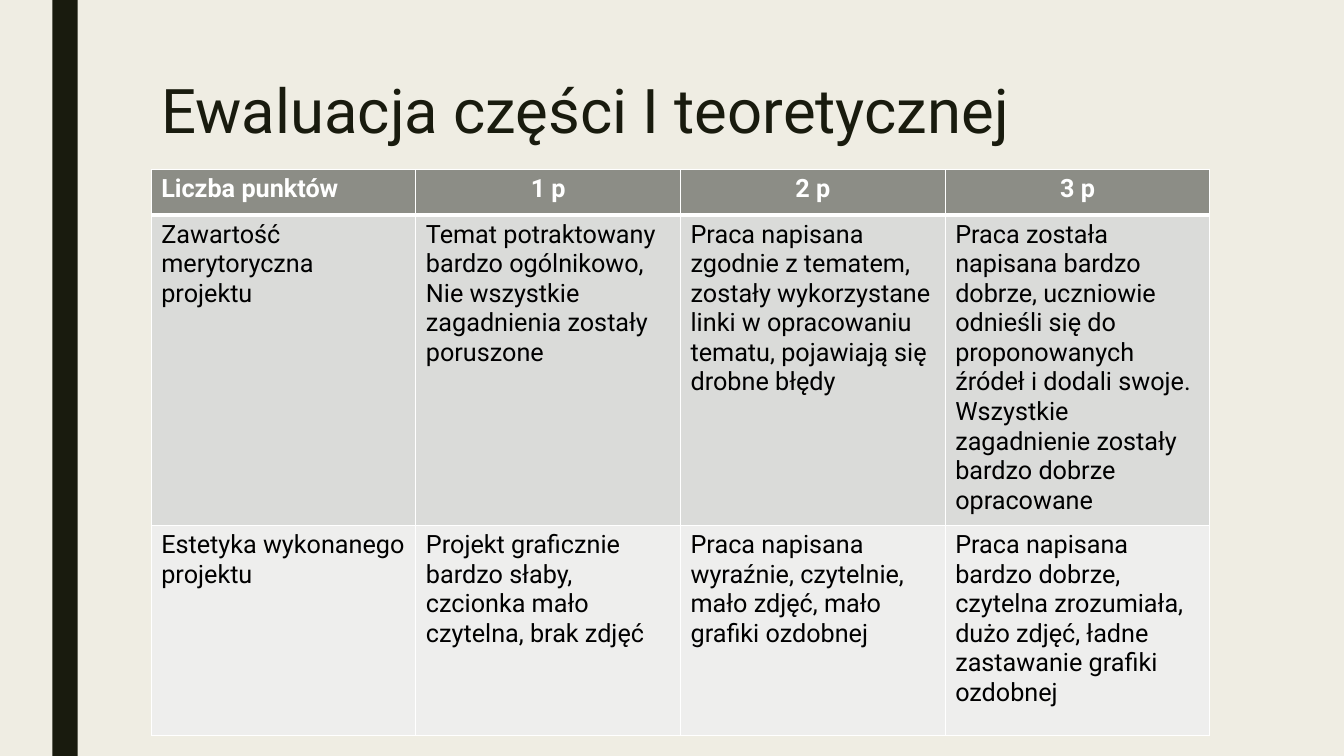
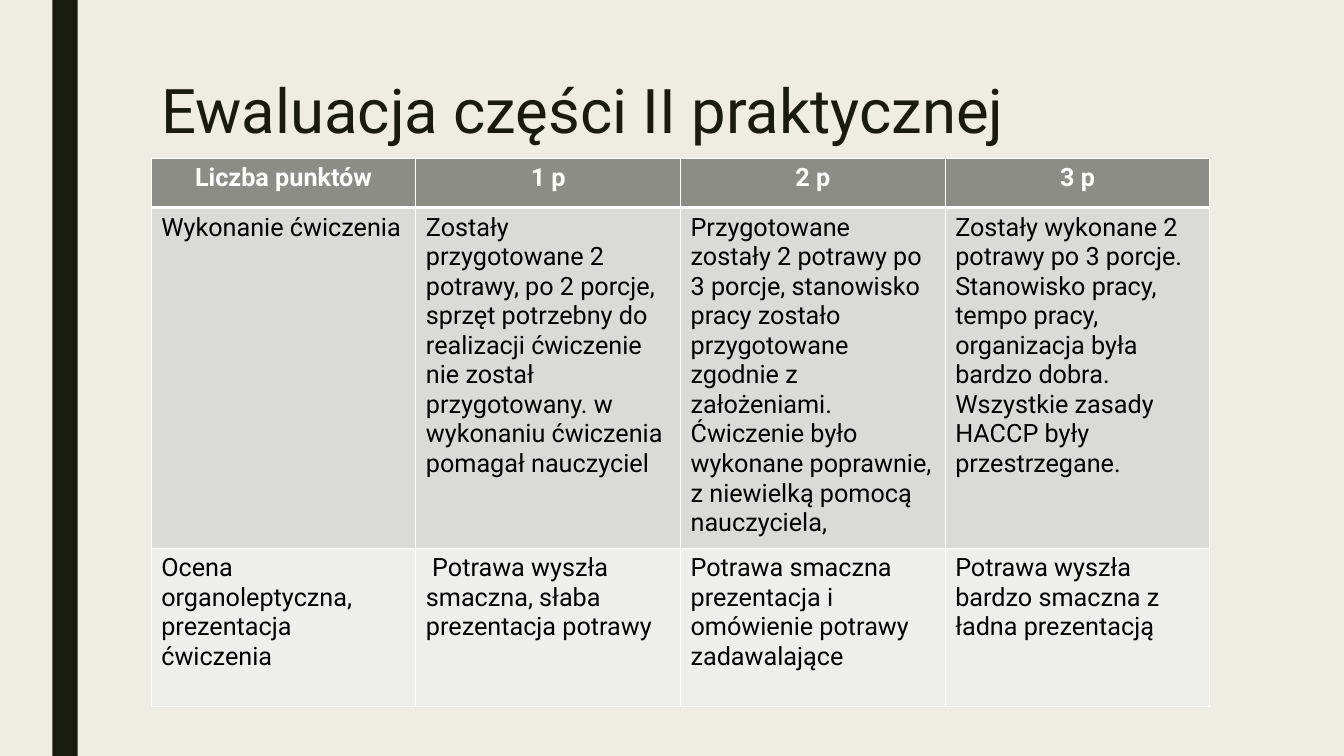
from dataclasses import dataclass

from lxml.etree import SubElement
from pptx import Presentation
from pptx.dml.color import RGBColor
from pptx.enum.shapes import MSO_SHAPE
from pptx.enum.text import MSO_ANCHOR, MSO_AUTO_SIZE, PP_ALIGN
from pptx.oxml.ns import qn
from pptx.util import Inches, Pt


@dataclass(frozen=True)
class Theme:
    paper: str = "EFEDE3"
    ink: str = "191B0E"
    head: str = "8C8D86"
    bands: tuple = ("DADBD9", "EEEEED")
    white: str = "FFFFFF"
    black: str = "000000"
    font: str = "Roboto"
    title: int = 44
    body: int = 18
    thin: int = 1
    thick: int = 3


@dataclass(frozen=True)
class Box:
    left: float
    top: float
    width: float
    height: float

    def place(self, shape):
        shape.left, shape.top = Inches(self.left), Inches(self.top)
        shape.width, shape.height = Inches(self.width), Inches(self.height)


THEME = Theme()
WIDTH, HEIGHT = 13.33, 7.5
LEFT, TOP, SPAN = 1.5, 0.75, 10.5
BAND = Box(0.52, 0, 0.25, HEIGHT)
POINTS = ["Liczba punktów", "1 p", "2 p", "3 p"]

SLIDES = [
    dict(
        title="Ewaluacja części I teoretycznej",
        split=1.68,
        first=PP_ALIGN.LEFT,
        heights=[0.45, 3.08, 2.09],
        rows=[
            [
                "Zawartość merytoryczna projektu",
                "Temat potraktowany bardzo ogólnikowo,\n"
                "Nie wszystkie zagadnienia zostały poruszone",
                "Praca napisana zgodnie z tematem, zostały wykorzystane "
                "linki w opracowaniu tematu, pojawiają się drobne błędy",
                "Praca została napisana bardzo dobrze, uczniowie odnieśli się "
                "do proponowanych źródeł i dodali swoje.\n"
                "Wszystkie zagadnienie zostały bardzo dobrze opracowane",
            ],
            [
                "Estetyka wykonanego projektu",
                "Projekt graficznie bardzo słaby, czcionka mało czytelna, "
                "brak zdjęć",
                "Praca napisana wyraźnie, czytelnie, mało zdjęć, "
                "mało grafiki ozdobnej",
                "Praca napisana bardzo dobrze, czytelna zrozumiała, "
                "dużo zdjęć, ładne zastawanie grafiki ozdobnej",
            ],
        ],
    ),
    dict(
        title="Ewaluacja części II praktycznej",
        split=1.57,
        first=PP_ALIGN.CENTER,
        heights=[0.49, 3.38, 1.57],
        rows=[
            [
                "Wykonanie ćwiczenia",
                "Zostały przygotowane 2 potrawy, po 2 porcje, sprzęt "
                "potrzebny do realizacji ćwiczenie nie został przygotowany. "
                "w wykonaniu ćwiczenia pomagał nauczyciel",
                "Przygotowane zostały 2 potrawy po 3 porcje, stanowisko pracy "
                "zostało przygotowane zgodnie z założeniami. Ćwiczenie było "
                "wykonane poprawnie, z niewielką pomocą nauczyciela,",
                "Zostały wykonane 2 potrawy po 3 porcje. Stanowisko pracy, "
                "tempo pracy, organizacja była bardzo dobra. "
                "Wszystkie zasady HACCP były przestrzegane.",
            ],
            [
                "Ocena organoleptyczna,\nprezentacja\nćwiczenia",
                " Potrawa wyszła smaczna, słaba prezentacja potrawy",
                "Potrawa smaczna prezentacja i omówienie potrawy zadawalające",
                "Potrawa wyszła bardzo smaczna z ładna prezentacją",
            ],
        ],
    ),
]


def tint(fill, color):
    fill.solid()
    fill.fore_color.rgb = RGBColor.from_string(color)


def write(frame, text, size=THEME.body, color=THEME.black, bold=False,
          align=PP_ALIGN.LEFT, lead=None):
    frame.text = text
    frame.word_wrap = True
    for para in frame.paragraphs:
        para.alignment = align
        para.line_spacing = lead
        for run in para.runs:
            font = run.font
            font.name, font.size, font.bold = THEME.font, Pt(size), bold
            font.color.rgb = RGBColor.from_string(color)


def edge(cell, **widths):
    props = cell._tc.get_or_add_tcPr()
    for spot, side in enumerate("LRTB"):
        width = widths.get(side, THEME.thin)
        line = SubElement(props, qn(f"a:ln{side}"), w=str(Pt(width)))
        fill = SubElement(line, qn("a:solidFill"))
        SubElement(fill, qn("a:srgbClr"), val=THEME.white)
        props.insert(spot, line)


def add_band(master, slide, box):
    band = slide.shapes.add_shape(MSO_SHAPE.RECTANGLE, 0, 0, 0, 0)
    box.place(band)
    band.shadow.inherit = False
    tint(band.fill, THEME.ink)
    band.line.fill.background()
    band.element.nvSpPr.cNvPr.set("id", "20")
    master.shapes.element.append(band.element)


def add_title(slide, box, text):
    title = slide.shapes.title
    box.place(title)
    frame = title.text_frame
    write(frame, text, size=THEME.title, color=THEME.ink, lead=0.89)
    frame.vertical_anchor = MSO_ANCHOR.TOP
    frame.auto_size = MSO_AUTO_SIZE.NONE


def add_grid(slide, box, rows, heights, first):
    count = len(POINTS)
    frame = slide.shapes.add_table(
        len(heights), count, Inches(box.left), Inches(box.top),
        Inches(box.width), Inches(box.height))
    table = frame.table
    table.horz_banding = False
    for col in table.columns:
        col.width = Inches(box.width / count)
    for row, height in zip(table.rows, heights):
        row.height = Inches(height)
    for col, text in enumerate(POINTS):
        cell = table.cell(0, col)
        write(cell.text_frame, text, color=THEME.white, bold=True,
              align=PP_ALIGN.CENTER if col else first)
        tint(cell.fill, THEME.head)
        edge(cell, B=THEME.thick)
    for row, texts in enumerate(rows, 1):
        for col, text in enumerate(texts):
            cell = table.cell(row, col)
            write(cell.text_frame, text)
            tint(cell.fill, THEME.bands[row - 1])
            edge(cell, T=THEME.thick if row == 1 else THEME.thin)


def add_page(deck, title, split, first, heights, rows):
    slide = deck.slides.add_slide(deck.slide_layouts.get_by_name("Title Only"))
    add_title(slide, Box(LEFT, TOP, SPAN, split - TOP), title)
    add_grid(slide, Box(LEFT, split, SPAN, sum(heights)), rows, heights, first)
    return slide


def main():
    deck = Presentation()
    deck.slide_width, deck.slide_height = Inches(WIDTH), Inches(HEIGHT)
    master = deck.slide_master
    tint(master.background.fill, THEME.paper)
    pages = [add_page(deck, **data) for data in SLIDES]
    add_band(master, pages[0], BAND)
    deck.save("out.pptx")


if __name__ == "__main__":
    main()
